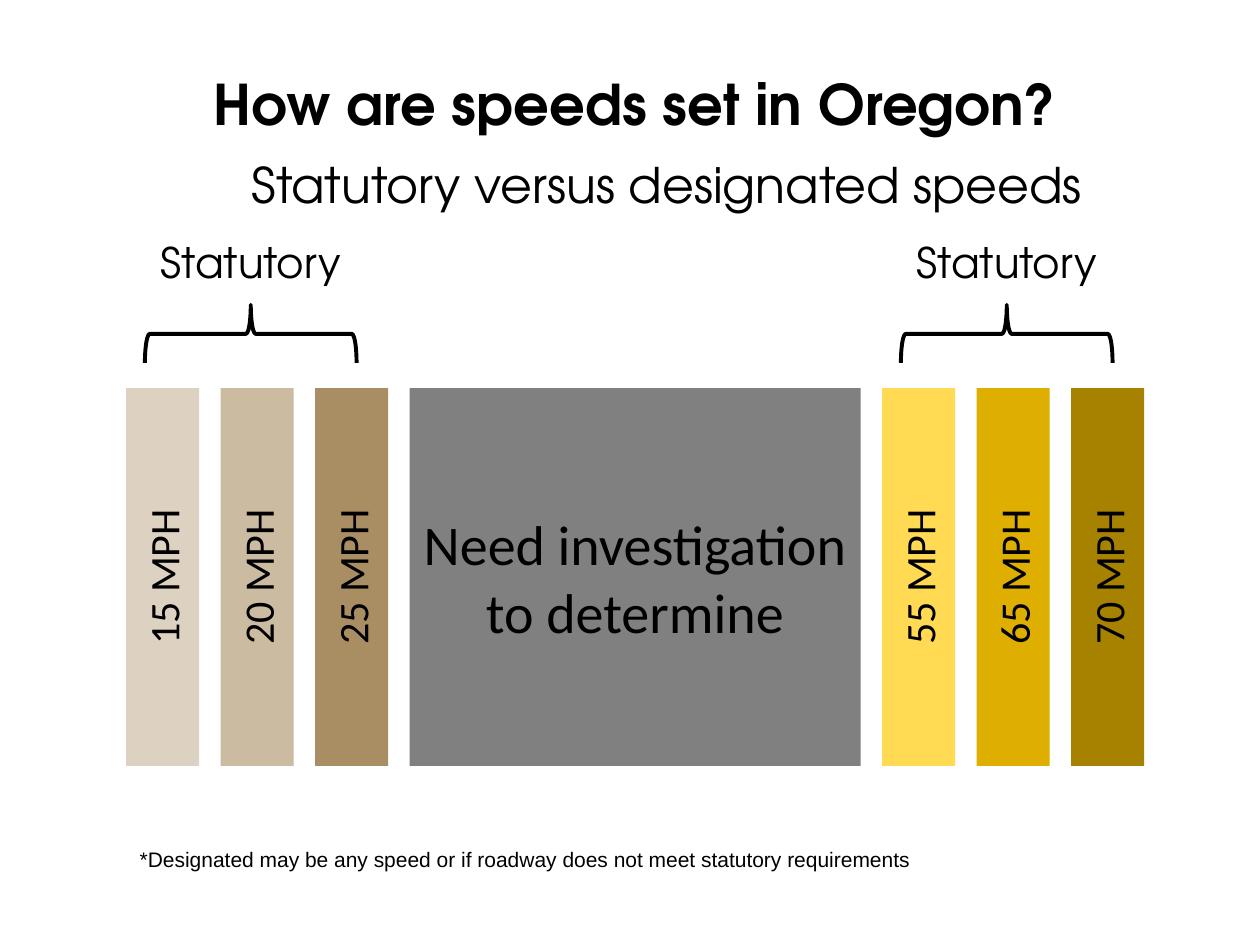
import pptx
import pptx.util
from pptx.dml.color import RGBColor
from pptx.enum.shapes import MSO_SHAPE
from pptx.enum.text import MSO_ANCHOR, MSO_AUTO_SIZE, PP_ALIGN

BLACK = RGBColor(0x00, 0x00, 0x00)
GREY = RGBColor(0x80, 0x80, 0x80)
TANS = [RGBColor(0xDD, 0xD1, 0xC1), RGBColor(0xCB, 0xBB, 0xA1), RGBColor(0xA9, 0x8D, 0x63)]
GOLDS = [RGBColor(0xFF, 0xDA, 0x52), RGBColor(0xDE, 0xAE, 0x00), RGBColor(0xA6, 0x82, 0x00)]
HEADING_FONT, BAR_FONT, NOTE_FONT = "TeX Gyre Adventor", "Calibri", "Arial"

TITLE = "How are speeds set in Oregon?"
SUBTITLE = "Statutory versus designated speeds"
MIDDLE = "Need investigation to determine"
NOTE = "*Designated may be any speed or if roadway does not meet statutory requirements"
# first grid column, group label, speeds, fills
GROUPS = [
    (0, "Statutory", ["15 MPH", "20 MPH", "25 MPH"], TANS),
    (8, "Statutory", ["55 MPH", "65 MPH", "70 MPH"], GOLDS),
]
MIDDLE_COLUMN, MIDDLE_SPAN = 3, 5

# Bar grid, in inches
GRID_LEFT, GRID_TOP, PITCH, GAP, BAR_HEIGHT = 1, 3.08, 0.75, 0.17, 3
BRACE_DEPTH, BRACE_SPAN, BRACE_TOP = 0.46, 1.68, 2.42
LABEL_WIDTH, LABEL_TOP = 1.65, 1.83


def inches(*values):
    return [pptx.util.Inches(v) for v in values]


def write(sp, text, size, font, bold=False, align=PP_ALIGN.LEFT,
          anchor=MSO_ANCHOR.TOP, wrap=True, vert=None):
    tf = sp.text_frame
    tf.auto_size = MSO_AUTO_SIZE.NONE if wrap else MSO_AUTO_SIZE.SHAPE_TO_FIT_TEXT
    tf.word_wrap = wrap
    tf.vertical_anchor = anchor
    if vert:
        tf._txBody.bodyPr.set("vert", vert)
    p = tf.paragraphs[0]
    p.alignment = align
    r = p.add_run()
    r.text = text
    r.font.size = pptx.util.Pt(size)
    r.font.name = font
    r.font.bold = bold
    r.font.color.rgb = BLACK


def add_text(slide, box, text, size, font, **style):
    write(slide.shapes.add_textbox(*inches(*box)), text, size, font, **style)


def add_bar(slide, column, span, text, fill, size, vert=None):
    sp = slide.shapes.add_shape(MSO_SHAPE.RECTANGLE, *inches(
        GRID_LEFT + column * PITCH, GRID_TOP, span * PITCH - GAP, BAR_HEIGHT))
    sp.shadow.inherit = False
    sp.fill.solid()
    sp.fill.fore_color.rgb = fill
    sp.line.fill.background()
    write(sp, text, size, BAR_FONT, align=PP_ALIGN.CENTER, anchor=MSO_ANCHOR.MIDDLE, vert=vert)


def add_brace(slide, center):
    """Turn a left brace by 90 degrees so that its point faces up."""
    middle = BRACE_TOP + BRACE_DEPTH / 2
    sp = slide.shapes.add_shape(MSO_SHAPE.LEFT_BRACE, *inches(
        center - BRACE_DEPTH / 2, middle - BRACE_SPAN / 2, BRACE_DEPTH, BRACE_SPAN))
    sp.rotation = 90
    sp.shadow.inherit = False
    sp.fill.background()
    sp.line.color.rgb = BLACK
    sp.line.width = pptx.util.Pt(2.25)


def main():
    prs = pptx.Presentation()
    prs.slide_width, prs.slide_height = inches(10, 7.5)
    slide = prs.slides.add_slide(prs.slide_layouts[5])

    title = slide.shapes.title
    title.left, title.top, title.width, title.height = inches(0.51, 0.47, 9.06, 0.69)
    write(title, TITLE, 32, HEADING_FONT, bold=True,
          align=PP_ALIGN.CENTER, anchor=MSO_ANCHOR.MIDDLE)
    add_text(slide, (0.75, 1.21, 9.08, 0.5), SUBTITLE, 28, HEADING_FONT,
             align=PP_ALIGN.CENTER, anchor=MSO_ANCHOR.MIDDLE)

    add_bar(slide, MIDDLE_COLUMN, MIDDLE_SPAN, MIDDLE, GREY, 32)
    for first, label, speeds, fills in GROUPS:
        for i, (speed, fill) in enumerate(zip(speeds, fills)):
            add_bar(slide, first + i, 1, speed, fill, 24, vert="vert270")
        center = GRID_LEFT + (first + len(speeds) / 2) * PITCH - GAP / 2
        add_brace(slide, center - 0.05)
        add_text(slide, (center - LABEL_WIDTH / 2 - 0.04, LABEL_TOP, LABEL_WIDTH, 0.5),
                 label, 24, HEADING_FONT, wrap=False)

    add_text(slide, (1.01, 6.67, 6.51, 0.3), NOTE, 12, NOTE_FONT, wrap=False)
    prs.save("out.pptx")


if __name__ == "__main__":
    main()
